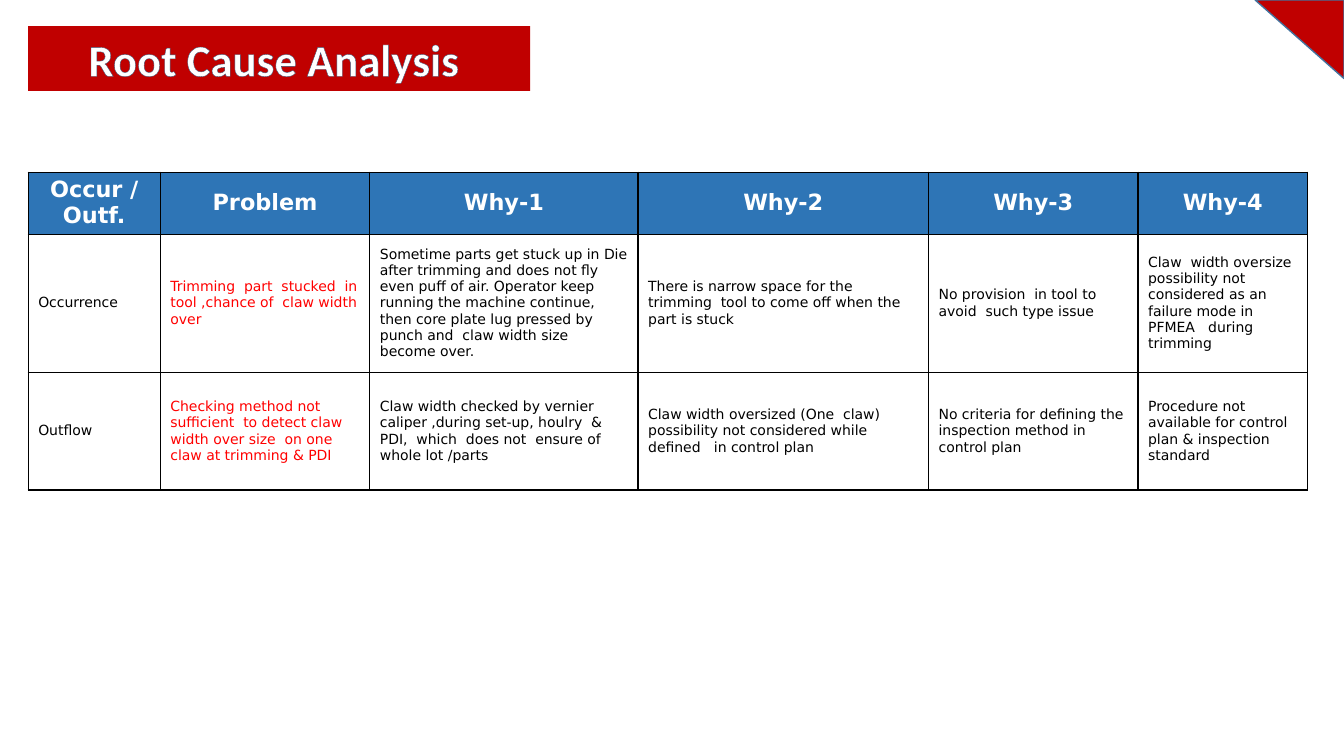
"""Build the root cause analysis slide with its why-why table."""
from lxml.etree import SubElement
from pptx import Presentation
from pptx.dml.color import RGBColor
from pptx.enum.shapes import MSO_SHAPE
from pptx.enum.text import MSO_ANCHOR, PP_ALIGN
from pptx.oxml.ns import qn
from pptx.util import Cm, Pt

RED = RGBColor(0xC0, 0x00, 0x00)
ALERT = RGBColor(0xFF, 0x00, 0x00)
BLUE = RGBColor(0x2E, 0x75, 0xB6)
EDGE = RGBColor(0x43, 0x73, 0x9E)
NAVY = RGBColor(0x3A, 0x52, 0x74)
WHITE = RGBColor(0xFF, 0xFF, 0xFF)
BLACK = RGBColor(0x00, 0x00, 0x00)

WIDE, HIGH = 33.87, 19.05
COLS = [3.33, 5.28, 6.76, 7.32, 5.28, 4.27]
ROWS = [1.37, 3.48, 2.97]
CAUSES = [
    ["Occur / Outf.", "Problem", "Why-1", "Why-2", "Why-3", "Why-4"],
    [
        "Occurrence",
        "Trimming  part  stucked  in tool ,chance of  claw width over",
        "Sometime parts get stuck up in Die after trimming and does not fly "
        "even puff of air. Operator keep running the machine continue, then "
        "core plate lug pressed by punch and  claw width size become over.",
        "There is narrow space for the trimming  tool to come off when the "
        "part is stuck",
        "No provision  in tool to avoid  such type issue",
        "Claw  width oversize possibility not considered as an failure mode "
        "in PFMEA   during trimming",
    ],
    [
        "Outflow",
        "Checking method not sufficient  to detect claw width over size  on "
        "one  claw at trimming & PDI",
        "Claw width checked by vernier caliper ,during set-up, houlry  & "
        "PDI,  which  does not  ensure of whole lot /parts",
        "Claw width oversized (One  claw) possibility not considered while "
        "defined   in control plan",
        "No criteria for defining the inspection method in control plan",
        "Procedure not available for control plan & inspection standard",
    ],
]


def stroke(parent, tag, color):
    """Add a solid one-point line element to the parent and return it."""
    line = SubElement(parent, qn(tag), w=str(Pt(1)))
    fill = SubElement(line, qn("a:solidFill"))
    SubElement(fill, qn("a:srgbClr"), val=str(color))
    return line


def write(frame, text, font="DejaVu Sans", size=10, color=BLACK, bold=False,
          align=PP_ALIGN.LEFT, rim=None):
    """Put one formatted paragraph into a text frame."""
    frame.word_wrap = True
    par = frame.paragraphs[0]
    par.alignment = align
    run = par.add_run()
    run.text = text
    run.font.name = font
    run.font.size = Pt(size)
    run.font.bold = bold
    run.font.color.rgb = color
    if rim is not None:
        props = run.font._element
        props.insert(0, stroke(props, "a:ln", rim))


def draw(slide, kind, box, fill):
    """Draw a flat preset shape in a box given in centimetres."""
    shape = slide.shapes.add_shape(kind, *map(Cm, box))
    shape.shadow.inherit = False
    shape.fill.solid()
    shape.fill.fore_color.rgb = fill
    shape.line.fill.background()
    return shape


def corner(slide, box):
    """Place the red triangle with its right angle at the top right."""
    shape = draw(slide, MSO_SHAPE.RIGHT_TRIANGLE, box, RED)
    shape.rotation = 180
    shape.line.color.rgb = EDGE
    shape.line.width = Pt(1)


def title(slide, box):
    """Place the red title bar."""
    frame = draw(slide, MSO_SHAPE.RECTANGLE, box, RED).text_frame
    frame.vertical_anchor = MSO_ANCHOR.MIDDLE
    write(frame, "Root Cause Analysis ", font="Calibri", size=32, color=WHITE,
          bold=True, align=PP_ALIGN.CENTER, rim=NAVY)


def matrix(slide, left, top):
    """Place the table of causes with its top left corner at a point."""
    box = (left, top, sum(COLS), sum(ROWS))
    table = slide.shapes.add_table(len(ROWS), len(COLS), *map(Cm, box)).table
    table.first_row = table.horz_banding = False
    for col, width in zip(table.columns, COLS):
        col.width = Cm(width)
    for row, height, texts in zip(table.rows, ROWS, CAUSES):
        row.height = Cm(height)
        head = texts is CAUSES[0]
        for index, (cell, text) in enumerate(zip(row.cells, texts)):
            cell.vertical_anchor = MSO_ANCHOR.MIDDLE
            for side in "LRTB":
                stroke(cell._tc.get_or_add_tcPr(), f"a:ln{side}", BLACK)
            if head:
                cell.fill.solid()
                cell.fill.fore_color.rgb = BLUE
                write(cell.text_frame, text, size=16, color=WHITE, bold=True,
                      align=PP_ALIGN.CENTER)
            else:
                cell.fill.background()
                write(cell.text_frame, text,
                      color=ALERT if index == 1 else BLACK)


def main():
    """Build and save the slide."""
    deck = Presentation()
    deck.slide_width, deck.slide_height = Cm(WIDE), Cm(HIGH)
    slide = deck.slides.add_slide(deck.slide_layouts[6])
    corner(slide, (WIDE - 2.24, 0, 2.24, 1.98))
    title(slide, (0.71, 0.66, 12.65, 1.63))
    matrix(slide, 0.71, 4.34)
    deck.save("out.pptx")


if __name__ == "__main__":
    main()
